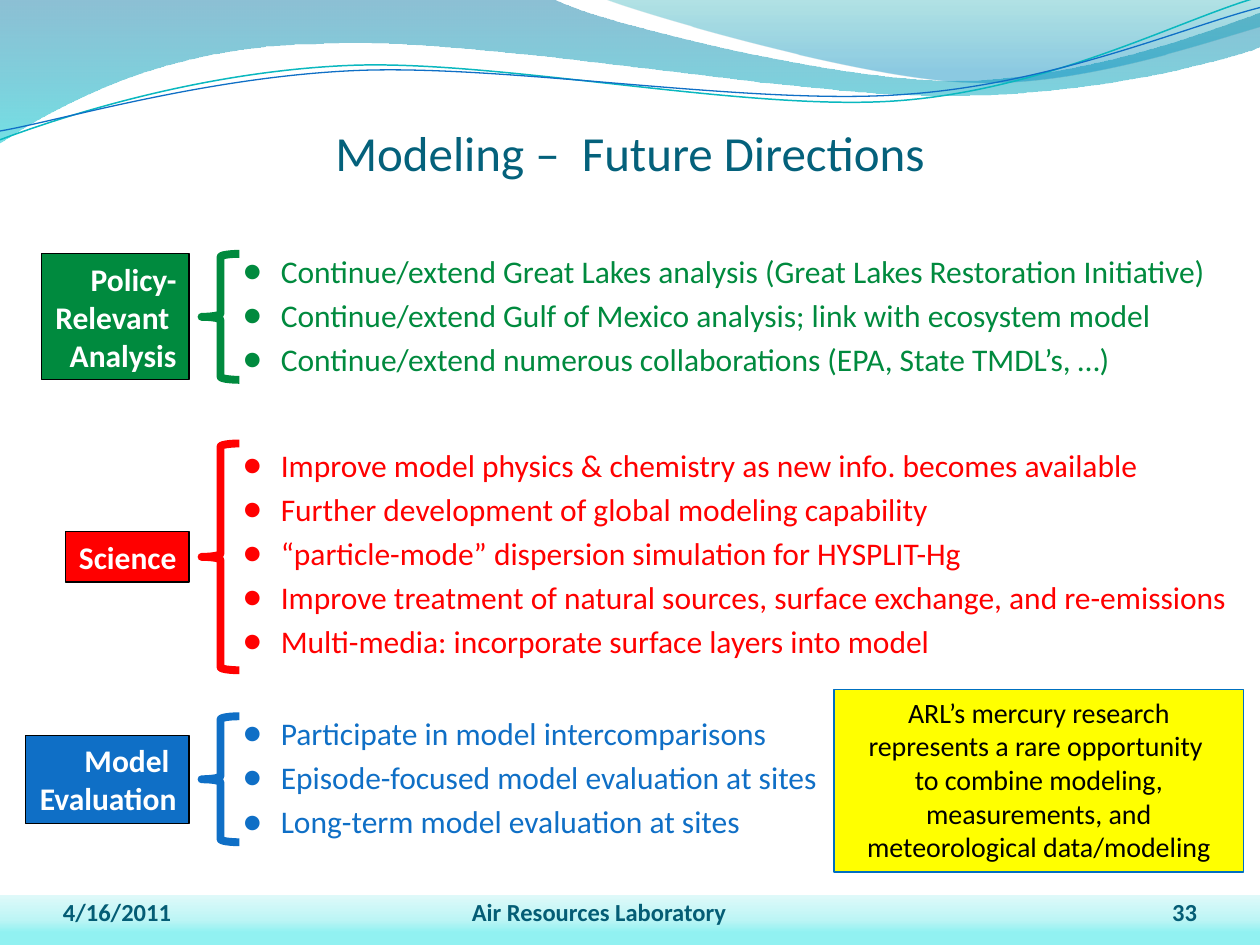
from dataclasses import dataclass

from pptx import Presentation
from pptx.dml.color import RGBColor
from pptx.enum.shapes import MSO_SHAPE
from pptx.enum.text import MSO_ANCHOR, PP_ALIGN
from pptx.oxml import parse_xml
from pptx.oxml.ns import nsdecls, qn
from pptx.util import Inches, Pt


@dataclass(frozen=True)
class Theme:
    """Colours and type sizes of the slide."""
    font: str = "Calibri"
    title: str = "04617B"
    footer: str = "045D75"
    policy: str = "008A3E"
    science: str = "FF0000"
    evaluation: str = "0F6FC6"
    note: str = "FFFF00"
    note_line: str = "0070C0"
    teal_line: str = "0AB8BF"
    white: str = "FFFFFF"
    black: str = "000000"
    title_size: int = 28
    body_size: int = 18
    note_size: int = 16
    footer_size: int = 14
    band: tuple = ((25, "91F1F1", 100), (50, "BDF5F5", 100), (100, "DFF9F9", 100))
    wave: tuple = ((0, "0074A1", 45), (100, "00C6CF", 55))
    crest: tuple = ((0, "00A1A9", 30), (80, "008BBF", 45))


T = Theme()
WAVE = [(0, 0), (4.4, 0), (4.76, 0.18, 6.64, 0.64, 7.58, 0.64),
        (8.53, 0.64, 9.58, 0.26, 10, 0.1), (10.01, 0.37),
        (9.83, 0.45, 8.7, 0.77, 7.46, 0.76), (6.22, 0.76, 3.82, 0.29, 2.57, 0.35),
        (1.29, 0.36, 0.46, 0.84, -0.01, 1.14), (0, 0)]
CREST = [(4.79, -0.01), (5.09, 0.11, 6.82, 0.62, 7.69, 0.65),
         (8.56, 0.69, 9.61, 0.32, 10, 0.21), (10, 0), (4.79, -0.01)]
TEAL_CURVE = [(0, 1.11), (0.48, 0.93, 1.58, 0.57, 2.77, 0.52),
              (3.95, 0.47, 5.93, 0.89, 7.13, 0.8), (8.33, 0.71, 9.38, 0.15, 9.98, -0.02)]
BLUE_CURVE = [(0, 1.04), (0.47, 0.96, 1.64, 0.61, 2.83, 0.56),
              (4.03, 0.51, 5.97, 0.84, 7.17, 0.75), (8.36, 0.67, 9.41, 0.21, 10, 0.06)]


def write(tf, lines, size, color, bold=False, align=PP_ALIGN.LEFT,
          anchor=MSO_ANCHOR.TOP, wrap=True, insets=None, bullet=None, gap=0):
    """Fill a text frame with one formatted paragraph per line."""
    tf.word_wrap, tf.vertical_anchor = wrap, anchor
    if insets:
        tf.margin_left, tf.margin_top, tf.margin_right, tf.margin_bottom = map(Inches, insets)
    for i, line in enumerate(lines):
        p = tf.add_paragraph() if i else tf.paragraphs[0]
        p.alignment = align
        if i and gap:
            p.space_before = Pt(gap)
        if bullet:
            add_bullet(p, bullet, color)
        r = p.add_run()
        r.text = line
        r.font.name, r.font.size, r.font.bold = T.font, Pt(size), bold
        r.font.color.rgb = RGBColor.from_string(color)


def add_bullet(p, char, color):
    """Give a paragraph a coloured bullet with a hanging indent."""
    pPr = p._p.get_or_add_pPr()
    pPr.set("marL", str(Inches(0.3)))
    pPr.set("indent", str(-Inches(0.3)))
    for xml in (f'<a:buClr {nsdecls("a")}><a:srgbClr val="{color}"/></a:buClr>',
                f'<a:buFont {nsdecls("a")} typeface="{T.font}"/>',
                f'<a:buChar {nsdecls("a")} char="{char}"/>'):
        pPr.append(parse_xml(xml))


def paint(sp, fill=None, line=None, width=0.75):
    """Set a shape's solid fill and line, or switch them off."""
    sp.shadow.inherit = False
    if fill:
        sp.fill.solid()
        sp.fill.fore_color.rgb = RGBColor.from_string(fill)
    else:
        sp.fill.background()
    if line:
        sp.line.color.rgb = RGBColor.from_string(line)
        sp.line.width = Pt(width)
    else:
        sp.line.fill.background()


def paint_gradient(sp, stops, angle):
    """Fill a shape with a linear gradient of (position, colour, opacity) stops."""
    paint(sp)
    sp.fill.gradient()
    gs = "".join(f'<a:gs pos="{pos * 1000}"><a:srgbClr val="{color}">'
                 f'<a:alpha val="{alpha * 1000}"/></a:srgbClr></a:gs>'
                 for pos, color, alpha in stops)
    spPr = sp._element.spPr
    spPr.replace(spPr.find(qn("a:gradFill")), parse_xml(
        f'<a:gradFill {nsdecls("a")} rotWithShape="1"><a:gsLst>{gs}</a:gsLst>'
        f'<a:lin ang="{angle * 60000}" scaled="0"/></a:gradFill>'))


def add_box(s, box, shape=MSO_SHAPE.RECTANGLE):
    """Add a preset shape in a box given in inches."""
    return s.shapes.add_shape(shape, *map(Inches, box))


def add_text(s, box, lines, size, color, **fmt):
    """Add a text box in a box given in inches."""
    write(s.shapes.add_textbox(*map(Inches, box)).text_frame, lines, size, color, **fmt)


def add_curve(s, origin, segments, closed):
    """Add a freeform from points and cubic Bézier segments."""
    x, y = origin
    points = [(Inches(x + seg[i]), Inches(y + seg[i + 1]))
              for seg in segments for i in range(0, len(seg), 2)]
    fb = s.shapes.build_freeform(*points[0], scale=1.0)
    fb.add_line_segments(points[1:], close=closed)
    sp = fb.convert_to_shape()
    steps = iter(list(sp._element.iter(qn("a:lnTo"))))
    for seg in segments[1:]:
        first = next(steps)
        if len(seg) == 6:
            bezier = parse_xml(f'<a:cubicBezTo {nsdecls("a")}/>')
            first.addprevious(bezier)
            for step in (first, next(steps), next(steps)):
                bezier.append(step[0])
                step.getparent().remove(step)
    return sp


def add_header(s, origin):
    """Draw the waves across the top."""
    for segments, stops in ((WAVE, T.wave), (CREST, T.crest)):
        paint_gradient(add_curve(s, origin, segments, True), stops, 90)
    for segments, color, width in ((TEAL_CURVE, T.teal_line, 0.85),
                                   (BLUE_CURVE, T.evaluation, 0.75)):
        paint(add_curve(s, origin, segments, False), line=color, width=width)


def add_footer(s, box):
    """Draw the bottom band with date, organisation and page number."""
    x, y, w, h = box
    paint_gradient(add_box(s, box), T.band, 270)
    for left, width, text, align in (
            (0.5, 2.33, "4/16/2011", PP_ALIGN.LEFT),
            (2.92, 3.67, "Air Resources Laboratory", PP_ALIGN.CENTER),
            (w - 1.33, 0.83, "33", PP_ALIGN.RIGHT)):
        add_text(s, (x + left, y - 0.15, width, h), [text], T.footer_size, T.footer,
                 bold=True, align=align, anchor=MSO_ANCHOR.BOTTOM, insets=(0, 0, 0, 0))


def add_title(s, box, text):
    """Place and format the title placeholder."""
    title = s.shapes.title
    title.left, title.top, title.width, title.height = map(Inches, box)
    write(title.text_frame, [text], T.title_size, T.title, align=PP_ALIGN.CENTER,
          anchor=MSO_ANCHOR.BOTTOM, insets=(0, 0.05, 0, 0))


def add_topic(s, box, color, label, label_width, brace_height, items):
    """Place a label, a brace and a bulleted list centred on one line."""
    x, y, w, h = box
    middle = y + h / 2
    brace = add_box(s, (x + 1.6, middle - brace_height / 2, 0.3, brace_height),
                    MSO_SHAPE.LEFT_BRACE)
    paint(brace, line=color, width=4.5)
    label_height = 0.1 + 0.3 * len(label)
    sp = add_box(s, (x + 1.5 - label_width, middle - label_height / 2,
                     label_width, label_height))
    paint(sp, color, T.black)
    write(sp.text_frame, label, T.body_size, T.white, bold=True,
          align=PP_ALIGN.RIGHT, wrap=False)
    add_text(s, (x + 1.83, y, w - 1.83, h), items, T.body_size, color, bullet="●", gap=3.6)


def add_note(s, box, lines):
    """Place the highlighted closing remark."""
    sp = add_box(s, box)
    paint(sp, T.note, T.note_line)
    write(sp.text_frame, lines, T.note_size, T.black, align=PP_ALIGN.CENTER)


def main():
    """Build the slide and save it."""
    prs = Presentation()
    prs.slide_width, prs.slide_height = Inches(10), Inches(7.5)
    s = prs.slides.add_slide(prs.slide_layouts[5])
    add_footer(s, (0, 7.1, 10, 0.4))
    add_header(s, (0, 0))
    add_title(s, (0.5, 0.92, 9, 0.52), "Modeling –  Future Directions")
    add_topic(s, (0, 3.49, 9.91, 1.86), T.science, ["Science"], 0.98, 1.8, [
        "Improve model physics & chemistry as new info. becomes available",
        "Further development of global modeling capability",
        "“particle-mode” dispersion simulation for HYSPLIT-Hg",
        "Improve treatment of natural sources, surface exchange, and re-emissions",
        "Multi-media: incorporate surface layers into model"])
    add_topic(s, (0, 1.95, 9.91, 1.13), T.policy, ["Policy-", "Relevant ", "Analysis"], 1.17, 1, [
        "Continue/extend Great Lakes analysis (Great Lakes Restoration Initiative)",
        "Continue/extend Gulf of Mexico analysis; link with ecosystem model",
        "Continue/extend numerous collaborations (EPA, State TMDL’s, …)"])
    add_topic(s, (0, 5.62, 9.91, 1.13), T.evaluation, ["Model ", "Evaluation"], 1.3, 1, [
        "Participate in model intercomparisons",
        "Episode-focused model evaluation at sites",
        "Long-term model evaluation at sites"])
    add_note(s, (6.62, 5.47, 3.25, 1.45), [
        "ARL’s mercury research represents a rare opportunity ",
        "to combine modeling, measurements, and meteorological data/modeling"])
    prs.save("out.pptx")


if __name__ == "__main__":
    main()
